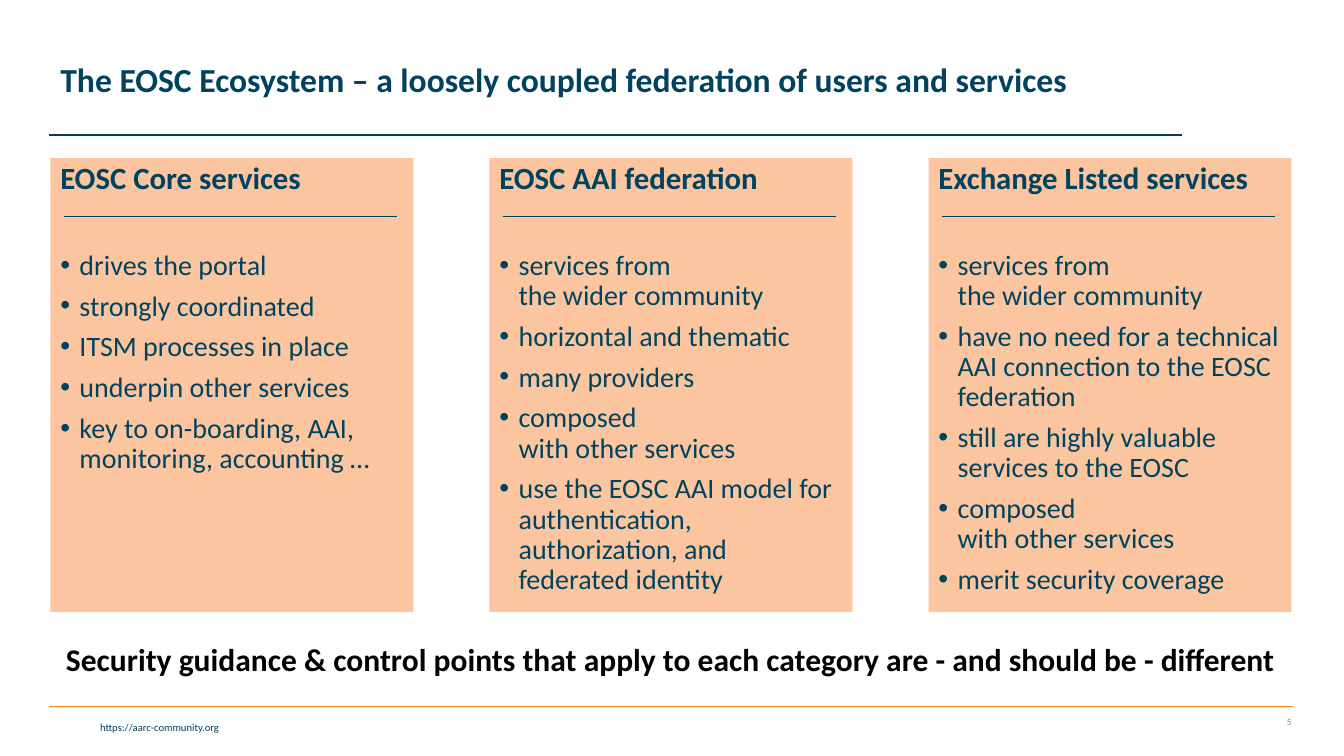
from lxml.etree import SubElement as Sub
from pptx import Presentation
from pptx.dml.color import RGBColor as RGB
from pptx.enum.shapes import MSO_CONNECTOR as Conn, MSO_SHAPE as Shape
from pptx.enum.text import MSO_ANCHOR as Anchor, PP_ALIGN as Align
from pptx.oxml.ns import qn
from pptx.util import Inches, Pt

HUES = {
    "navy": "004360",
    "rule": "003F5E",
    "orange": "F57B20",
    "peach": "FBC69F",
    "gray": "8C8C8C",
    "black": "000000",
}

LEFT, SPAN, WIDE = 0.5, 12.31, 3.6
STEP = (SPAN - WIDE) / 2

CARDS = [
    ("EOSC Core services", [
        "drives the portal",
        "strongly coordinated",
        "ITSM processes in place",
        "underpin other services",
        "key to on-boarding, AAI, monitoring, accounting …",
    ]),
    ("EOSC AAI federation", [
        "services from\nthe wider community",
        "horizontal and thematic",
        "many providers",
        "composed\nwith other services",
        "use the EOSC AAI model for authentication, authorization, and federated identity",
    ]),
    ("Exchange Listed services", [
        "services from\nthe wider community",
        "have no need for a technical AAI connection to the EOSC federation",
        "still are highly valuable services to the EOSC",
        "composed\nwith other services",
        "merit security coverage",
    ]),
]


def hue(name):
    return RGB.from_string(HUES[name])


def write(para, text, size=20, color="navy", bold=False, align=Align.LEFT,
          lead=1.0, before=0, bullet=False):
    para.text = text
    para.alignment = align
    para.line_spacing = lead
    para.space_before = Pt(before)
    if bullet:
        props = para._p.get_or_add_pPr()
        props.set("marL", str(Inches(0.19)))
        props.set("indent", str(Inches(-0.19)))
        Sub(props, qn("a:buFont")).set("typeface", "Arial")
        Sub(props, qn("a:buChar")).set("char", "•")
    for run in para.runs:
        font = run.font
        font.name = "Calibri"
        font.size = Pt(size)
        font.bold = bold
        font.color.rgb = hue(color)


class Deck:
    def __init__(self):
        self.show = Presentation()
        self.show.slide_width = Inches(13.33)
        self.show.slide_height = Inches(7.5)
        self.slide = self.show.slides.add_slide(self.show.slide_layouts[6])
        self.items = self.slide.shapes

    def line(self, x, y, end, color="rule", width=1):
        link = self.items.add_connector(
            Conn.STRAIGHT, Inches(x), Inches(y), Inches(end), Inches(y))
        link.line.color.rgb = hue(color)
        link.line.width = Pt(width)
        Sub(link._element.spPr, qn("a:effectLst"))

    def text(self, x, y, wide, high, text, anchor=Anchor.TOP, **style):
        box = self.items.add_textbox(
            Inches(x), Inches(y), Inches(wide), Inches(high))
        frame = box.text_frame
        frame.word_wrap = True
        frame.vertical_anchor = anchor
        write(frame.paragraphs[0], text, **style)

    def card(self, x, head, points):
        box = self.items.add_shape(
            Shape.RECTANGLE, Inches(x), Inches(1.57), Inches(WIDE), Inches(4.5))
        box.shadow.inherit = False
        box.fill.solid()
        box.fill.fore_color.rgb = hue("peach")
        box.line.fill.background()
        frame = box.text_frame
        frame.word_wrap = True
        frame.vertical_anchor = Anchor.TOP
        write(frame.paragraphs[0], head, size=22, bold=True, lead=0.9)
        for i, point in enumerate(points):
            write(frame.add_paragraph(), point, lead=0.9,
                  before=7.5 if i else 39, bullet=True)
        self.line(x + 0.13, 2.15, x + 3.44, width=0.5)

    def save(self):
        self.show.save("out.pptx")


def main():
    deck = Deck()
    deck.line(0.49, 7.01, 12.82, color="orange")
    deck.text(0.28, 7.1, 1.99, 0.23, "https://aarc-community.org",
              size=7.5, color="rule", align=Align.RIGHT)
    deck.line(0.49, 1.34, 11.72)
    deck.text(12.1, 7.01, 0.81, 0.3, "5", anchor=Anchor.MIDDLE,
              size=6.8, color="gray", align=Align.RIGHT)
    deck.text(LEFT, 0.08, 10.51, 1.45,
              "The EOSC Ecosystem – a loosely coupled federation of users and services",
              anchor=Anchor.MIDDLE, size=24, bold=True, lead=0.9)
    for i, (head, points) in enumerate(CARDS):
        deck.card(LEFT + i * STEP, head, points)
    deck.text(LEFT, 6.3, SPAN, 0.48,
              "Security guidance & control points that apply to each category "
              "are - and should be - different",
              size=22.5, color="black", bold=True, align=Align.CENTER)
    deck.save()


if __name__ == "__main__":
    main()
